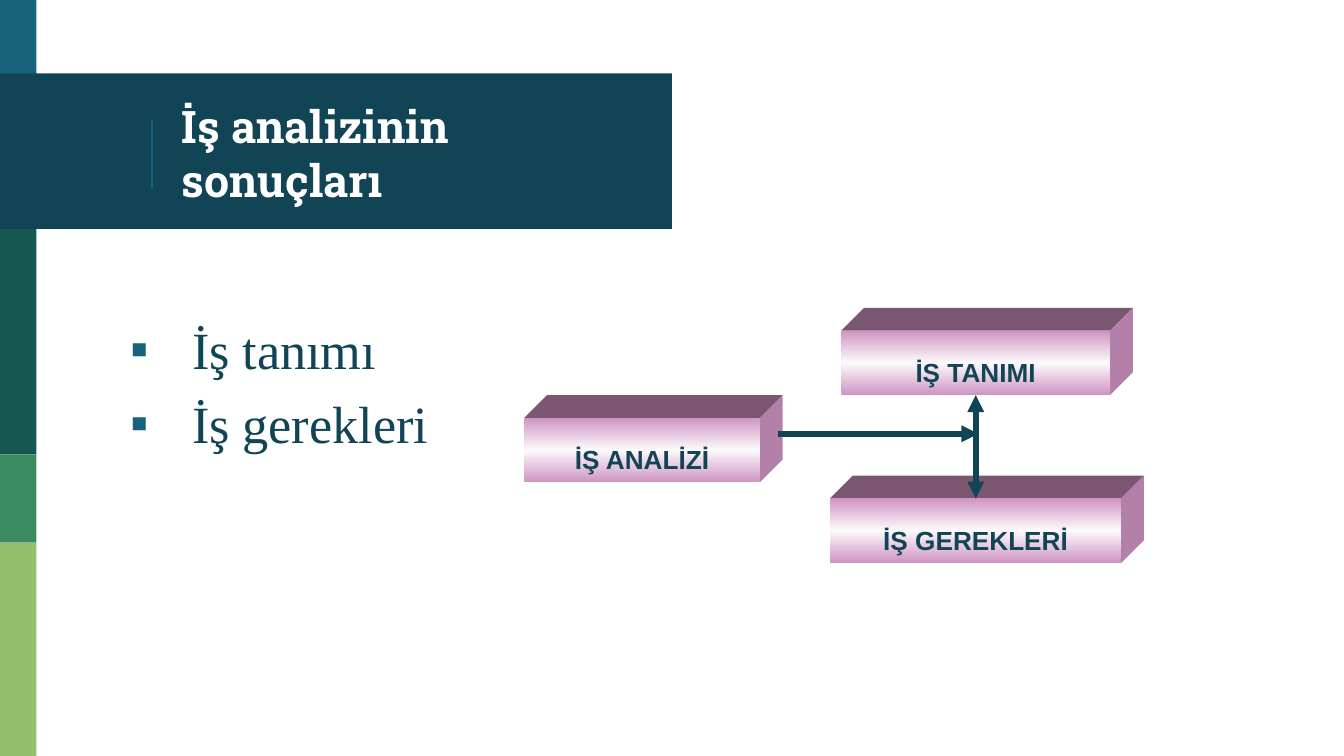
from copy import deepcopy

from lxml.etree import SubElement
from pptx import Presentation
from pptx.dml.color import RGBColor
from pptx.enum.shapes import MSO_CONNECTOR, MSO_SHAPE
from pptx.enum.text import MSO_ANCHOR, MSO_AUTO_SIZE, PP_ALIGN
from pptx.oxml.ns import qn
from pptx.util import Cm, Pt

WHITE = RGBColor(0xFF, 0xFF, 0xFF)
NAVY = RGBColor(0x11, 0x44, 0x54)
BLUE = RGBColor(0x18, 0x63, 0x7B)
DARK_GREEN = RGBColor(0x16, 0x57, 0x51)
GREEN = RGBColor(0x3B, 0x8D, 0x61)
LIGHT_GREEN = RGBColor(0x94, 0xBF, 0x6E)
PINK = RGBColor(0xCE, 0x94, 0xC3)
PALE_PINK = RGBColor(0xFD, 0xFA, 0xFC)
BLOCK_TOP = RGBColor(0x7A, 0x56, 0x71)
BLOCK_SIDE = RGBColor(0xB3, 0x80, 0xA9)

STRIP_WIDTH = 0.69
BLOCK_HEIGHT = 1.22
BLOCK_DEPTH = 0.43


def write_text(shape, lines, *, font, size, color=NAVY, bold=False, align=PP_ALIGN.LEFT,
               anchor=MSO_ANCHOR.TOP, margin=0.25, line_spacing=None, space_before=0):
    frame = shape.text_frame
    frame.word_wrap = True
    frame.auto_size = MSO_AUTO_SIZE.NONE
    frame.vertical_anchor = anchor
    frame.margin_left = frame.margin_right = Cm(0.25)
    frame.margin_top = frame.margin_bottom = Cm(margin)
    frame.text = "\n".join(lines)
    for paragraph in frame.paragraphs:
        paragraph.alignment = align
        paragraph.line_spacing = line_spacing
        paragraph.space_before = Pt(space_before)
        paragraph.font.name = font
        paragraph.font.size = Pt(size)
        paragraph.font.bold = bold
        paragraph.font.color.rgb = color


def add_bullet(paragraph, symbol, color):
    properties = paragraph._p.get_or_add_pPr()
    properties.set("marL", str(Cm(1.27)))
    properties.set("indent", str(Cm(-1.17)))
    bullet_color = SubElement(properties, qn("a:buClr"))
    SubElement(bullet_color, qn("a:srgbClr"), val=str(color))
    SubElement(properties, qn("a:buFont"), typeface="Arial")
    SubElement(properties, qn("a:buChar"), char=symbol)


def paint(shape, color):
    shape.shadow.inherit = False
    shape.fill.solid()
    shape.fill.fore_color.rgb = color
    shape.line.fill.background()


def add_rectangle(slide, left, top, width, height, color):
    shape = slide.shapes.add_shape(
        MSO_SHAPE.RECTANGLE, Cm(left), Cm(top), Cm(width), Cm(height))
    paint(shape, color)
    return shape


def add_face(slide, points, color):
    corners = [(Cm(x), Cm(y)) for x, y in points]
    builder = slide.shapes.build_freeform(*corners[0])
    builder.add_line_segments(corners[1:], close=True)
    paint(builder.convert_to_shape(), color)


def apply_gradient(shape, edge, middle):
    shape.fill.gradient()
    shape.fill.gradient_angle = 270
    first, last = shape.fill.gradient_stops
    first.color.rgb = last.color.rgb = edge
    first.position, last.position = 0, 1
    stops = shape.element.spPr.find(qn("a:gradFill")).find(qn("a:gsLst"))
    stops.insert(1, deepcopy(stops[0]))
    center = shape.fill.gradient_stops[1]
    center.position = 0.5
    center.color.rgb = middle


def add_block(slide, label, left, top, width):
    right, bottom = left + width, top + BLOCK_HEIGHT
    back_left, back_right = left + BLOCK_DEPTH, right + BLOCK_DEPTH
    back_top, back_bottom = top - BLOCK_DEPTH, bottom - BLOCK_DEPTH
    add_face(slide, [(left, top), (back_left, back_top), (back_right, back_top),
                     (right, top)], BLOCK_TOP)
    add_face(slide, [(right, top), (back_right, back_top), (back_right, back_bottom),
                     (right, bottom)], BLOCK_SIDE)
    front = add_rectangle(slide, left, top, width, BLOCK_HEIGHT, PINK)
    apply_gradient(front, PINK, PALE_PINK)
    write_text(front, [label], font="Arial", size=14, bold=True, align=PP_ALIGN.CENTER,
               margin=0.13, line_spacing=1.6)
    return front


def add_line(slide, start, end, color, width, arrows=()):
    connector = slide.shapes.add_connector(
        MSO_CONNECTOR.STRAIGHT, *(Cm(value) for value in start + end))
    connector.line.color.rgb = color
    connector.line.width = Pt(width)
    outline = connector.line._get_or_add_ln()
    for arrow in arrows:
        SubElement(outline, qn(f"a:{arrow}"), type="triangle")
    SubElement(connector.element.spPr, qn("a:effectLst"))
    return connector


def add_title(slide, text):
    title = slide.shapes.title
    title.left, title.top, title.width, title.height = Cm(3.18), Cm(1.47), Cm(8.92), Cm(2.84)
    write_text(title, [text], font="Roboto Slab", size=24, color=WHITE, bold=True,
               anchor=MSO_ANCHOR.MIDDLE)
    title.element.getparent().append(title.element)


def add_bullet_list(slide, lines):
    box = slide.shapes.add_textbox(Cm(2.11), Cm(5.74), Cm(22.6), Cm(6.73))
    write_text(box, lines, font="Times New Roman", size=28, space_before=6)
    for paragraph in box.text_frame.paragraphs:
        add_bullet(paragraph, "▪", BLUE)


def add_background(slide):
    strips = [(0, 1.47, BLUE), (4.32, 8.59, DARK_GREEN), (8.59, 10.26, GREEN),
              (10.26, 14.29, LIGHT_GREEN)]
    for top, bottom, color in strips:
        add_rectangle(slide, 0, top, STRIP_WIDTH, bottom - top, color)
    add_rectangle(slide, 0, 1.39, 12.7, 2.94, NAVY)
    add_line(slide, (2.87, 2.26), (2.87, 3.56), BLUE, 0.75)


def add_diagram(slide):
    definition = add_block(slide, "İŞ TANIMI", 15.9, 6.25, 5.08)
    requirements = add_block(slide, "İŞ GEREKLERİ", 15.69, 9.42, 5.5)
    add_block(slide, "İŞ ANALİZİ", 9.91, 7.9, 4.45)
    link = add_line(slide, (18.44, 7.47), (18.44, 9.42), NAVY, 3, ["headEnd", "tailEnd"])
    link.begin_connect(definition, 2)
    link.end_connect(requirements, 0)
    add_line(slide, (14.71, 8.2), (18.49, 8.2), NAVY, 3, ["tailEnd"])


def main():
    presentation = Presentation()
    presentation.slide_width = Cm(25.4)
    presentation.slide_height = Cm(14.29)
    slide = presentation.slides.add_slide(presentation.slide_layouts[5])
    add_background(slide)
    add_title(slide, "İş analizinin sonuçları")
    add_bullet_list(slide, ["İş tanımı", "İş gerekleri"])
    add_diagram(slide)
    presentation.save("out.pptx")


if __name__ == "__main__":
    main()
